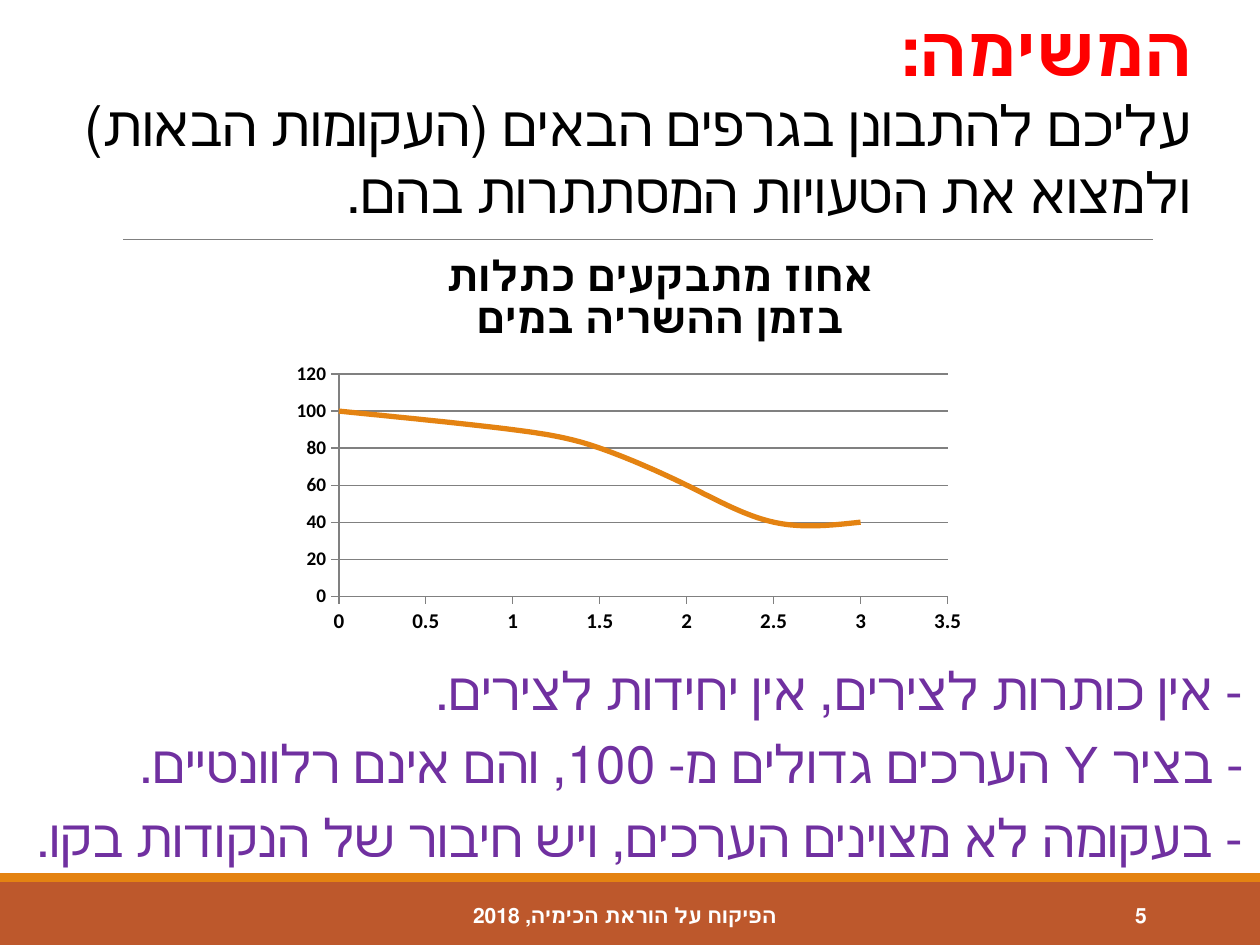
import pptx
import pptx.chart.data
import pptx.dml.color
import pptx.enum.chart
import pptx.enum.shapes
import pptx.enum.text
import pptx.oxml
import pptx.oxml.ns
import pptx.util
from pptx.util import Inches

RGBColor = pptx.dml.color.RGBColor
RUST = RGBColor(0xBD, 0x58, 0x2C)
ORANGE = RGBColor(0xE4, 0x83, 0x12)
GRAY = RGBColor(0x80, 0x80, 0x80)
PURPLE = RGBColor(0x70, 0x30, 0xA0)
RED = RGBColor(0xFF, 0, 0)
BLACK = RGBColor(0, 0, 0)
WHITE = RGBColor(0xFF, 0xFF, 0xFF)

ALIGN = pptx.enum.text.PP_ALIGN
ANCHOR = pptx.enum.text.MSO_ANCHOR


def add_text_box(slide, box, anchor=ANCHOR.TOP):
    frame = slide.shapes.add_textbox(*box).text_frame
    frame.word_wrap = True
    frame.vertical_anchor = anchor
    return frame


def write(frame, text, size, color, font="Calibri", bold=False, align=ALIGN.RIGHT, space_after=0):
    """Write one right-to-left paragraph, reusing the empty first one."""
    paragraph = frame.paragraphs[0]
    if paragraph.runs:
        paragraph = frame.add_paragraph()
    paragraph.alignment = align
    paragraph.space_after = pptx.util.Pt(space_after)
    paragraph._p.get_or_add_pPr().set("rtl", "1")
    for index, line in enumerate(text.split("\n")):
        if index:
            paragraph.add_line_break()
        run = paragraph.add_run()
        run.text = line
        run.font.size = pptx.util.Pt(size)
        run.font.bold = bold
        run.font.name = font
        run.font.color.rgb = color
        run._r.get_or_add_rPr().set("lang", "he-IL")


def add_band(slide, box, color):
    band = slide.shapes.add_shape(pptx.enum.shapes.MSO_SHAPE.RECTANGLE, *box)
    band.shadow.inherit = False
    band.fill.solid()
    band.fill.fore_color.rgb = color
    band.line.fill.background()


def add_rule(slide, left, right, top):
    rule = slide.shapes.add_connector(
        pptx.enum.shapes.MSO_CONNECTOR.STRAIGHT, left, top, right, top)
    rule.line.color.rgb = GRAY
    rule.line.width = pptx.util.Pt(0.5)
    rule._element.spPr.append(
        pptx.oxml.parse_xml(f'<a:effectLst {pptx.oxml.ns.nsdecls("a")}/>'))


def add_footer(slide, left, top, width, height):
    stripe = Inches(0.07)
    add_band(slide, (left, top, width, height), RUST)
    add_band(slide, (left, top - stripe, width, stripe), ORANGE)
    text_top, text_height = top + Inches(0.06), Inches(0.4)
    parts = [
        ("הפיקוח על הוראת הכימיה, 2018", 2.98, 3.96, ALIGN.CENTER),
        ("5", 8.12, 1.08, ALIGN.RIGHT),
    ]
    for text, offset, text_width, align in parts:
        box = (left + Inches(offset), text_top, Inches(text_width), text_height)
        write(add_text_box(slide, box, ANCHOR.MIDDLE), text, 12, WHITE, bold=True, align=align)


def add_task(slide, box):
    frame = add_text_box(slide, box)
    write(frame, "המשימה:", 40, RED, bold=True)
    write(frame, "עליכם להתבונן בגרפים הבאים (העקומות הבאות) "
                 "ולמצוא את הטעויות המסתתרות בהם.", 32, BLACK)


def add_mistakes(slide, box):
    frame = add_text_box(slide, box)
    for text in (
        "- אין כותרות לצירים, אין יחידות לצירים.",
        "- בציר Y הערכים גדולים מ- 100, והם אינם רלוונטיים.",
        "- בעקומה לא מצוינים הערכים, ויש חיבור של הנקודות בקו.",
    ):
        write(frame, text, 30, PURPLE, font="Arial", space_after=6)


def set_layout(parent, position, **values):
    """Place a chart part by hand, in fractions of the chart."""
    for layout in parent.findall(pptx.oxml.ns.qn("c:layout")):
        parent.remove(layout)
    children = "".join(f'<c:{tag} val="{value}"/>' for tag, value in values.items())
    parent.insert(position, pptx.oxml.parse_xml(
        f'<c:layout {pptx.oxml.ns.nsdecls("c")}>'
        f'<c:manualLayout>{children}</c:manualLayout></c:layout>'))


def format_axis(axis, size, maximum, step, gridlines):
    axis.minimum_scale, axis.maximum_scale, axis.major_unit = 0, maximum, step
    axis.has_major_gridlines = gridlines
    axis.major_tick_mark = pptx.enum.chart.XL_TICK_MARK.OUTSIDE
    axis.minor_tick_mark = pptx.enum.chart.XL_TICK_MARK.NONE
    axis.tick_labels.font.size = pptx.util.Pt(size)
    axis.tick_labels.font.bold = True
    lines = [axis.format.line]
    if gridlines:
        lines.append(axis.major_gridlines.format.line)
    for line in lines:
        line.color.rgb = GRAY
        line.width = pptx.util.Pt(0.75)


def add_soaking_chart(slide, box):
    data = pptx.chart.data.XyChartData()
    points = data.add_series("Series 1")
    for x, y in ((0, 100), (1, 90), (1.5, 80), (2, 60), (2.5, 40), (3, 40)):
        points.add_data_point(x, y)
    chart = slide.shapes.add_chart(
        pptx.enum.chart.XL_CHART_TYPE.XY_SCATTER_SMOOTH_NO_MARKERS, *box, data).chart
    chart.font.name = "Calibri"
    chart.font.size = pptx.util.Pt(10)
    chart.font.color.rgb = BLACK
    chart.has_legend = False
    chart.has_title = True
    title = chart.chart_title
    write(title.text_frame, "אחוז מתבקעים כתלות\nבזמן ההשריה במים",
          24, BLACK, bold=True, align=ALIGN.CENTER)
    title.include_in_layout = False
    set_layout(title._element, 1, xMode="edge", yMode="edge", x=0.23, y=0.02)

    plot = chart.plots[0]
    plot.vary_by_categories = False
    series = plot.series[0]
    for smooth in series._element.findall(pptx.oxml.ns.qn("c:smooth")):
        series._element.remove(smooth)
    series._element.append(
        pptx.oxml.parse_xml(f'<c:smooth {pptx.oxml.ns.nsdecls("c")} val="1"/>'))
    series.marker.style = pptx.enum.chart.XL_MARKER_STYLE.NONE
    series.format.line.color.rgb = ORANGE
    series.format.line.width = pptx.util.Pt(3)
    format_axis(chart.category_axis, 12, 3.5, 0.5, False)
    format_axis(chart.value_axis, 11, 120, 20, True)
    set_layout(chart._chartSpace.chart.plotArea, 0, layoutTarget="inner",
               xMode="edge", yMode="edge", x=0.08, y=0.33, w=0.88, h=0.56)


def main():
    presentation = pptx.Presentation()
    presentation.slide_width = Inches(10)
    presentation.slide_height = Inches(7.5)
    slide = presentation.slides.add_slide(presentation.slide_layouts[6])
    add_footer(slide, 0, Inches(7), Inches(10), Inches(0.5))
    add_rule(slide, Inches(0.98), Inches(9.15), Inches(1.9))
    add_mistakes(slide, (Inches(-0.35), Inches(5.17), Inches(10.32), Inches(1.78)))
    add_task(slide, (Inches(0.43), 0, Inches(9.13), Inches(1.85)))
    add_soaking_chart(slide, (Inches(2.25), Inches(1.93), Inches(5.49), Inches(3.15)))
    presentation.save("out.pptx")


if __name__ == "__main__":
    main()
